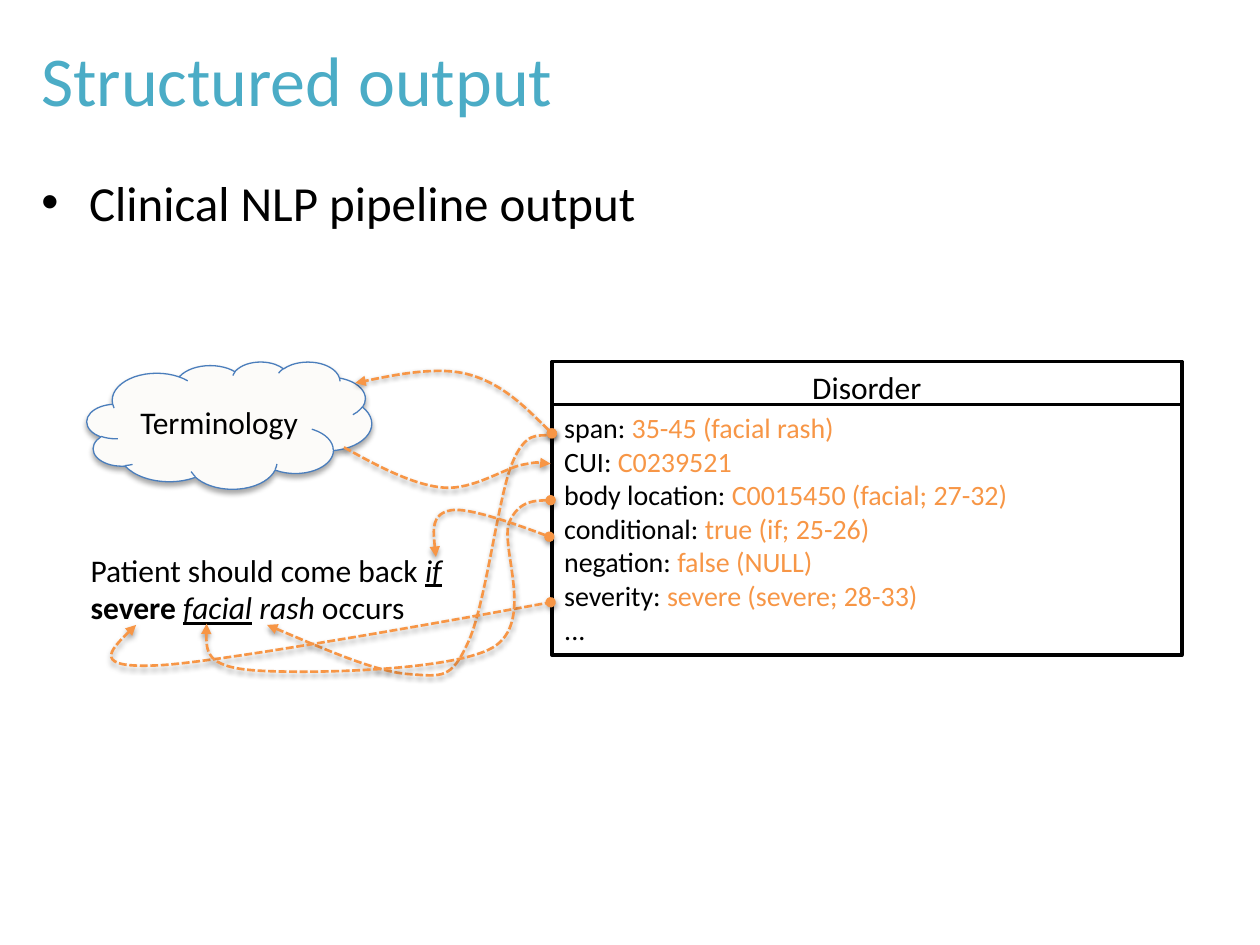
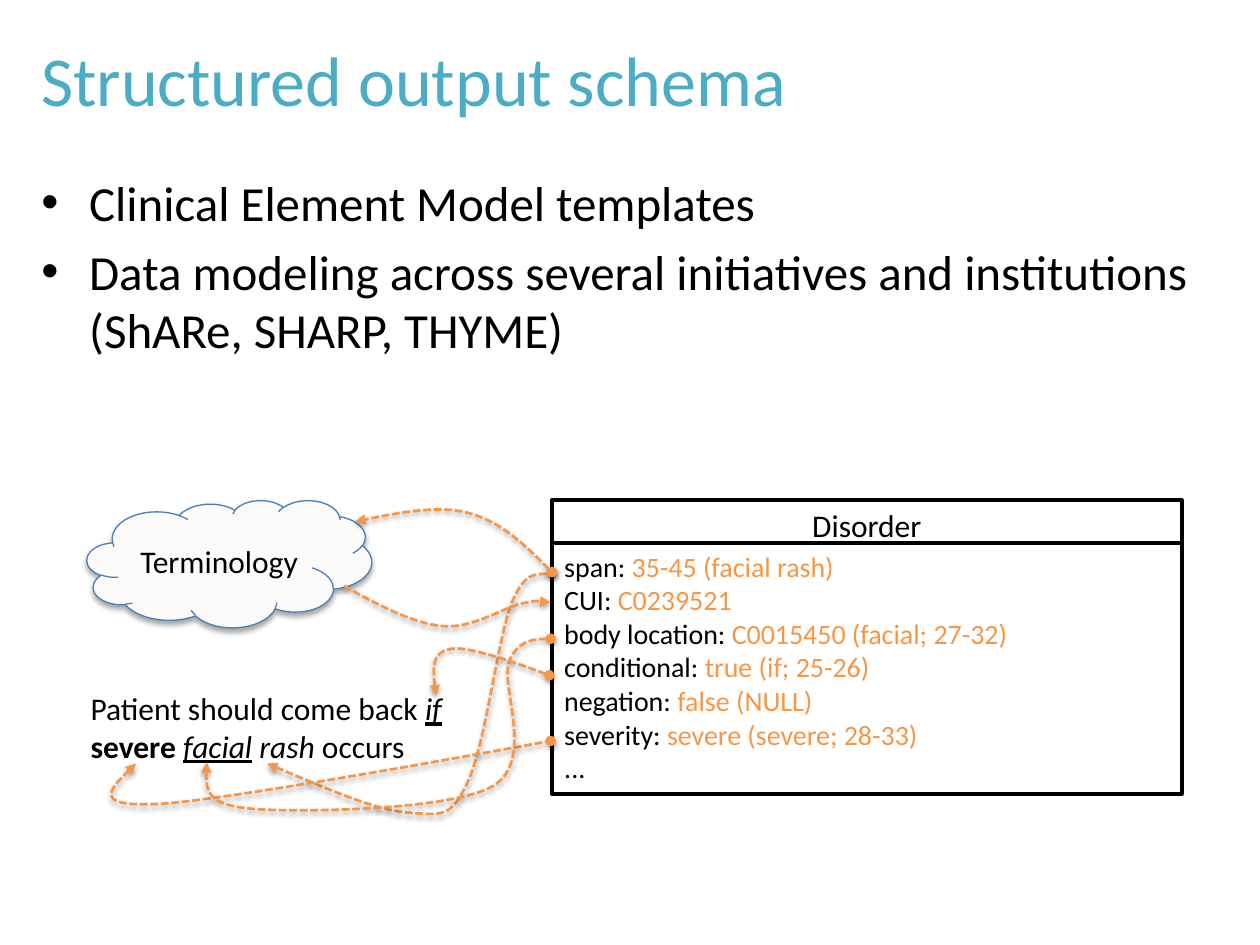
from pptx import Presentation
from pptx.dml.color import RGBColor
from pptx.enum.dml import MSO_LINE
from pptx.enum.shapes import MSO_SHAPE as SHAPE
from pptx.enum.text import MSO_ANCHOR as ANCHOR, MSO_AUTO_SIZE as AUTO, PP_ALIGN as ALIGN
from pptx.oxml.ns import qn
from pptx.util import Inches, Pt
from lxml.etree import SubElement

FONT = "Calibri"
COLORS = {"title": "4BACC6", "text": "000000", "value": "F79646", "box": "FFFFFF",
          "cloud": "FCFBF9", "cloud_line": "4B7EBC"}
DISORDER = [("span: ", "35-45 (facial rash)"), ("CUI: ", "C0239521"),
            ("body location: ", "C0015450 (facial; 27-32)"),
            ("conditional: ", "true (if; 25-26)"), ("negation: ", "false (NULL)"),
            ("severity: ", "severe (severe; 28-33)"), ("...", "")]
MARKED = {"italic": True, "underline": True}
SENTENCE = [[("Patient should come back ", {}), ("if", MARKED)],
            [("severe ", {"bold": True}), ("facial", MARKED),
             (" rash ", {"italic": True}), ("occurs", {})]]
# Each link: start marker, end marker, start point, then cubic segments (two controls and an end)
LINKS = [
    ("triangle", "oval", [(2.12, 4.96), (2.55, 5.14), (2.98, 5.33), (3.24, 5.35),
                          (3.51, 5.37), (3.58, 5.39), (3.71, 5.11),
                          (3.85, 4.83), (3.95, 3.97), (4.06, 3.69),
                          (4.17, 3.41), (4.33, 3.48), (4.38, 3.44)]),
    ("triangle", "oval", [(1.08, 4.96), (0.9, 5.13), (0.72, 5.31), (1.27, 5.28),
                          (1.82, 5.25), (4.37, 4.78), (4.37, 4.78)]),
    ("triangle", "oval", [(1.64, 4.95), (1.63, 5.12), (1.63, 5.29), (2.01, 5.32),
                          (2.39, 5.35), (3.58, 5.33), (3.91, 5.14),
                          (4.25, 4.94), (3.97, 4.35), (4.04, 4.15),
                          (4.12, 3.96), (4.37, 3.97), (4.37, 3.97)]),
    ("oval", "triangle", [(4.38, 3.44), (4.18, 3.24), (3.98, 3.04), (3.71, 2.97),
                          (3.45, 2.9), (2.82, 3.04), (2.82, 3.04)]),
    ("none", "triangle", [(2.73, 3.55), (3, 3.7), (3.28, 3.85), (3.52, 3.87),
                          (3.75, 3.89), (4, 3.72), (4.14, 3.69),
                          (4.29, 3.66), (4.37, 3.68), (4.37, 3.68)]),
    ("triangle", "oval", [(3.46, 4.42), (3.44, 4.25), (3.42, 4.08), (3.58, 4.05),
                          (3.73, 4.02), (4.36, 4.26), (4.36, 4.26)]),
]


def rgb(name):
    return RGBColor.from_string(COLORS[name])


def add_text(p, text, size=18, color="text", **style):
    """Append text to a paragraph; a newline becomes a line break."""
    for i, part in enumerate(text.split("\n")):
        if i:
            p.add_line_break()
        r = p.add_run()
        r.text = part
        r.font.name, r.font.size = FONT, Pt(size)
        r.font.color.rgb = rgb(color)
        for key, value in style.items():
            setattr(r.font, key, value)


def paragraphs(tf, count):
    return [tf.paragraphs[0]] + [tf.add_paragraph() for _ in range(count - 1)]


def sample_curve(points, steps=20):
    """Points along a chain of cubic segments."""
    for i in range(0, len(points) - 1, 3):
        for n in range(steps + 1):
            t = n / steps
            weights = ((1 - t) ** 3, 3 * t * (1 - t) ** 2, 3 * t * t * (1 - t), t ** 3)
            yield tuple(int(sum(w * Inches(pt[axis]) for w, pt in zip(weights, points[i:i + 4])))
                        for axis in (0, 1))


def add_shadow(sp, opacity, distance):
    sp.shadow.inherit = False
    effects = sp._element.spPr.find(qn("a:effectLst"))
    outer = SubElement(effects, qn("a:outerShdw"), blurRad=str(Pt(3.1)), dist=str(Pt(distance)),
                       dir="5400000", rotWithShape="0")
    color = SubElement(outer, qn("a:srgbClr"), val=COLORS["text"])
    SubElement(color, qn("a:alpha"), val=str(opacity * 1000))


class Deck:
    def __init__(self):
        self.prs = Presentation()
        self.prs.slide_width, self.prs.slide_height = Inches(10), Inches(7.5)

    def new_slide(self, title, bullets):
        self.slide = self.prs.slides.add_slide(self.prs.slide_layouts[6])
        tf = self.text_box(0.23, 0.23, 9.47, 0.78)
        tf.vertical_anchor = ANCHOR.MIDDLE
        add_text(tf.paragraphs[0], title, size=40, color="title")
        self.bullets(bullets)

    def text_box(self, x, y, w, h, wrap=True):
        tf = self.slide.shapes.add_textbox(*map(Inches, (x, y, w, h))).text_frame
        tf.word_wrap = wrap
        return tf

    def bullets(self, items):
        tf = self.text_box(0.23, 1.32, 9.47, 5.93)
        for p, item in zip(paragraphs(tf, len(items)), items):
            p.space_before = Pt(5.6)
            pPr = p._p.get_or_add_pPr()
            pPr.set("marL", str(Inches(0.38)))
            pPr.set("indent", str(Inches(-0.38)))
            SubElement(pPr, qn("a:buFont"), typeface="Arial")
            SubElement(pPr, qn("a:buChar"), char="•")
            add_text(p, item, size=28)

    def shape(self, kind, x, y, w, h, fill="box", line="text", weight=2.0):
        sp = self.slide.shapes.add_shape(kind, *map(Inches, (x, y, w, h)))
        sp.shadow.inherit = False
        sp.fill.solid()
        sp.fill.fore_color.rgb = rgb(fill)
        sp.line.color.rgb = rgb(line)
        sp.line.width = Pt(weight)
        sp.text_frame.word_wrap = True
        sp.text_frame.vertical_anchor = ANCHOR.TOP
        return sp

    def link(self, head, tail, points):
        """Dashed curve with a marker at each end."""
        start, *rest = sample_curve(points)
        builder = self.slide.shapes.build_freeform(*start)
        builder.add_line_segments(rest, close=False)
        sp = builder.convert_to_shape()
        outline = next(sp._element.iter(qn("a:path")))
        for child in list(outline):
            outline.remove(child)
        groups = [points[:1]] + [points[i:i + 3] for i in range(1, len(points), 3)]
        for group in groups:
            segment = SubElement(outline, qn("a:moveTo" if len(group) == 1 else "a:cubicBezTo"))
            for x, y in group:
                SubElement(segment, qn("a:pt"), x=str(Inches(x) - sp.left), y=str(Inches(y) - sp.top))
        sp.fill.background()
        sp.line.color.rgb = rgb("value")
        sp.line.width = Pt(1.5)
        sp.line.dash_style = MSO_LINE.SQUARE_DOT
        ln = sp._element.spPr.find(qn("a:ln"))
        SubElement(ln, qn("a:headEnd"), type=head)
        SubElement(ln, qn("a:tailEnd"), type=tail)
        add_shadow(sp, 38, 1.6)

    def sentence(self, y):
        tf = self.text_box(0.62, y, 3.05, 0.71, wrap=False)
        tf.auto_size = AUTO.SHAPE_TO_FIT_TEXT
        for p, runs in zip(paragraphs(tf, len(SENTENCE)), SENTENCE):
            for text, style in runs:
                add_text(p, text, **style)

    def disorder_box(self, y):
        header = self.shape(SHAPE.RECTANGLE, 4.38, y, 5, 0.4).text_frame
        header.paragraphs[0].alignment = ALIGN.CENTER
        add_text(header.paragraphs[0], "Disorder")
        tf = self.shape(SHAPE.RECTANGLE, 4.38, y + 0.34, 5, 1.99).text_frame
        for p, (name, value) in zip(paragraphs(tf, len(DISORDER)), DISORDER):
            p.alignment = ALIGN.LEFT
            add_text(p, name, size=16)
            if value:
                add_text(p, value, size=16, color="value")
        header.auto_size = tf.auto_size = AUTO.SHAPE_TO_FIT_TEXT

    def terminology(self, y):
        sp = self.shape(SHAPE.CLOUD, 0.69, y, 2.26, 1.01, "cloud", "cloud_line", 0.75)
        add_shadow(sp, 35, 1.8)
        tf = sp.text_frame
        tf.vertical_anchor = ANCHOR.MIDDLE
        tf.paragraphs[0].alignment = ALIGN.CENTER
        add_text(tf.paragraphs[0], "Terminology")

    def diagram(self, drop=0.0):
        """Sentence, terminology and disorder record with their links, moved down by drop."""
        self.sentence(4.32 + drop)
        self.disorder_box(2.87 + drop)
        self.terminology(2.87 + drop)
        for head, tail, points in LINKS:
            self.link(head, tail, [(x, y + drop) for x, y in points])


def main():
    deck = Deck()
    deck.new_slide("Structured output", ["Clinical NLP pipeline output"])
    deck.diagram()
    deck.new_slide("Structured output schema", [
        "Clinical Element Model templates",
        "Data modeling across several initiatives and institutions\n(ShARe, SHARP, THYME)"])
    deck.diagram(drop=1.1)
    deck.prs.save("out.pptx")


if __name__ == "__main__":
    main()
